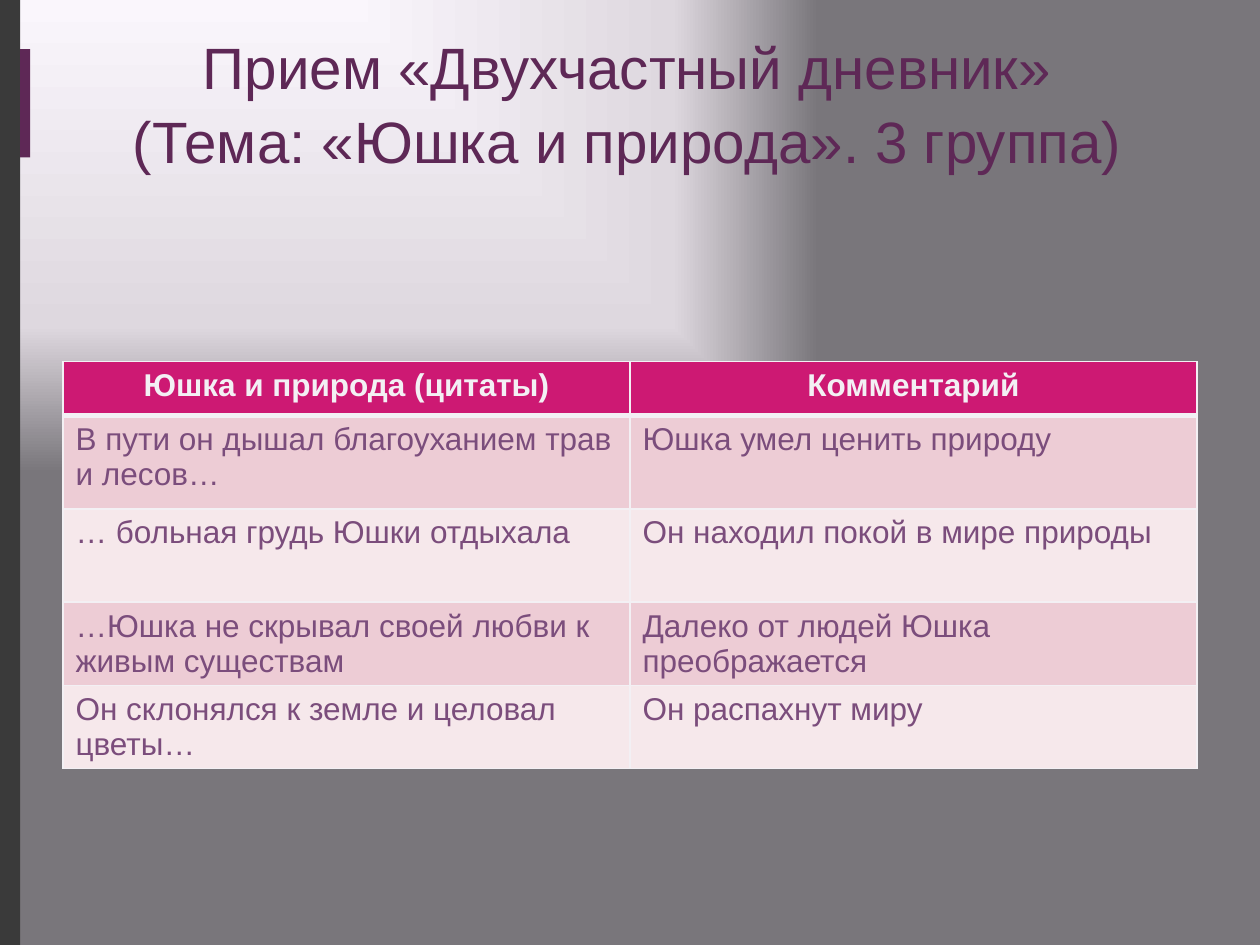
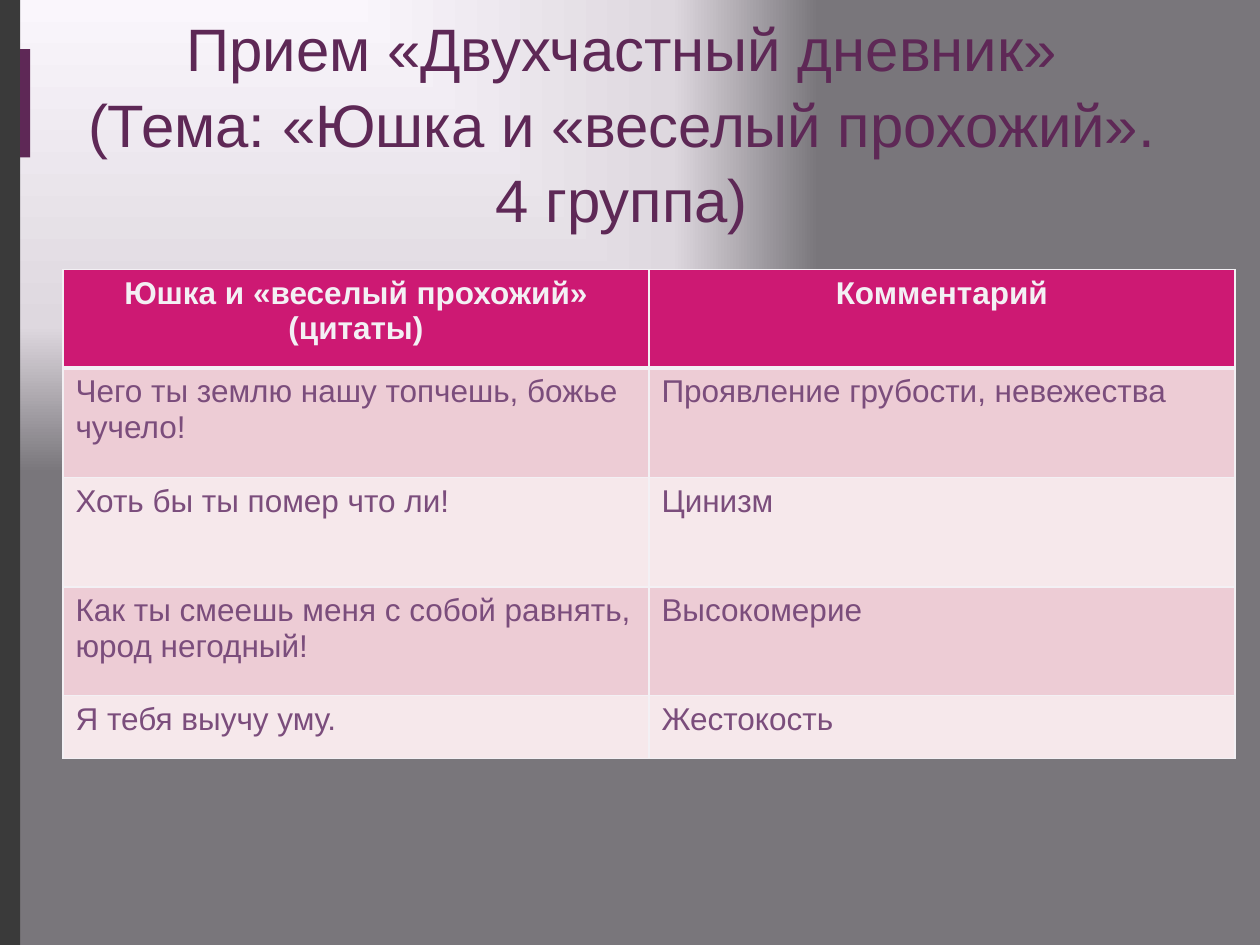
from lxml import etree
from pptx import Presentation
from pptx.dml.color import RGBColor
from pptx.enum.shapes import MSO_SHAPE
from pptx.enum.text import MSO_ANCHOR, MSO_AUTO_SIZE, PP_ALIGN
from pptx.oxml.ns import qn
from pptx.util import Inches, Pt

RECTANGLE = MSO_SHAPE.RECTANGLE
MIDDLE = MSO_ANCHOR.MIDDLE
NO_AUTOFIT = MSO_AUTO_SIZE.NONE
CENTER, LEFT = PP_ALIGN.CENTER, PP_ALIGN.LEFT

DIARIES = [
    {
        "title": "Прием «Двухчастный дневник» \v(Тема: «Юшка и природа». 3 группа) ",
        "title_box": (0.37, 0.3, 9.35, 1.01),
        "title_size": 33.3,
        "top": 2.87,
        "width": 9,
        "row_heights": (0.43, 0.74, 0.74, 0.66, 0.66),
        "entries": [
            ("Юшка и природа (цитаты)", "Комментарий"),
            ("В пути он дышал благоуханием трав и лесов…", "Юшка умел ценить природу"),
            ("… больная грудь Юшки отдыхала", "Он находил покой в мире природы"),
            ("…Юшка не скрывал своей любви к живым существам",
             "Далеко от людей Юшка преображается"),
            ("Он склонялся к земле и целовал цветы…", "Он распахнут миру"),
        ],
    },
    {
        "title": "Прием «Двухчастный дневник» \v(Тема: «Юшка и «веселый прохожий». \n4 группа) ",
        "title_box": (0.35, 0.14, 9.3, 1.65),
        "title_size": 34.2,
        "top": 2.14,
        "width": 9.3,
        "row_heights": (0.78, 0.87, 0.87, 0.86, 0.5),
        "entries": [
            ("Юшка и «веселый прохожий» (цитаты)", "Комментарий"),
            ("Чего ты землю нашу топчешь, божье чучело!", "Проявление грубости, невежества"),
            ("Хоть бы ты помер что ли!", "Цинизм"),
            ("Как ты смеешь меня с собой равнять, юрод негодный!", "Высокомерие"),
            ("Я тебя выучу уму.", "Жестокость"),
        ],
    },
]

WIDTH, HEIGHT = 10, 7.5
TABLE_LEFT = 0.5
FONT = "Arial"
PLUM = RGBColor(0x5E, 0x28, 0x56)
CHARCOAL = RGBColor(0x3A, 0x3A, 0x3A)
MAGENTA = RGBColor(0xCD, 0x19, 0x73)
PALE = RGBColor(0xF3, 0xF0, 0xF4)
VIOLET = RGBColor(0x7B, 0x4D, 0x7C)
ROW_TINTS = (RGBColor(0xF6, 0xE8, 0xEB), RGBColor(0xED, 0xCC, 0xD5))

BANDS = [((0, 0, 0.16, HEIGHT), CHARCOAL), ((0.16, 0.39, 0.08, 0.86), PLUM)]
GLOW_STOPS = [(0, "FAF6FC"), (69, "DED8DF"), (100, "79767B")]
GLOW_FOCUS = {"l": 0, "t": -50, "r": 70, "b": 180}


def child(parent, tag, **attributes):
    return etree.SubElement(parent, qn(tag), {k: str(v) for k, v in attributes.items()})


def paint_background(master):
    master.background.fill.gradient()
    glow = master.element.find(".//" + qn("a:gradFill"))
    for part in list(glow):
        glow.remove(part)
    stops = child(glow, "a:gsLst")
    for share, color in GLOW_STOPS:
        child(child(stops, "a:gs", pos=share * 1000), "a:srgbClr", val=color)
    focus = {side: share * 1000 for side, share in GLOW_FOCUS.items()}
    child(child(glow, "a:path", path="rect"), "a:fillToRect", **focus)


def add_bands(slide):
    for box, color in BANDS:
        band = slide.shapes.add_shape(RECTANGLE, *map(Inches, box))
        band.shadow.inherit = False
        band.fill.solid()
        band.fill.fore_color.rgb = color
        band.line.fill.background()


def format_text(paragraph, align, color, **font_values):
    paragraph.alignment = align
    for run in paragraph.runs:
        run.font.color.rgb = color
        for key, value in {"name": FONT, **font_values}.items():
            setattr(run.font, key, value)


def write_title(title, diary):
    title.left, title.top, title.width, title.height = map(Inches, diary["title_box"])
    frame = title.text_frame
    frame.text = diary["title"]
    for key, value in {"auto_size": NO_AUTOFIT, "vertical_anchor": MIDDLE, "word_wrap": True}.items():
        setattr(frame, key, value)
    for paragraph in frame.paragraphs:
        paragraph.line_spacing = 1.05
        format_text(paragraph, CENTER, PLUM, size=Pt(diary["title_size"]))


def add_borders(cell, row):
    weights = {"L": 1, "R": 1, "T": 3 if row == 1 else 1, "B": 3 if row == 0 else 1}
    properties = cell._tc.get_or_add_tcPr()
    for side, weight in weights.items():
        border = child(properties, "a:ln" + side, w=Pt(weight))
        child(child(border, "a:solidFill"), "a:srgbClr", val=PALE)


def add_diary_table(slide, diary):
    entries, heights = diary["entries"], diary["row_heights"]
    columns = len(entries[0])
    box = (TABLE_LEFT, diary["top"], diary["width"], sum(heights))
    table = slide.shapes.add_table(len(entries), columns, *map(Inches, box)).table
    for column in table.columns:
        column.width = Inches(diary["width"] / columns)
    for row, (entry, height) in enumerate(zip(entries, heights)):
        table.rows[row].height = Inches(height)
        header = row == 0
        for column, words in enumerate(entry):
            cell = table.cell(row, column)
            cell.text = words
            add_borders(cell, row)
            cell.fill.solid()
            cell.fill.fore_color.rgb = MAGENTA if header else ROW_TINTS[row % 2]
            format_text(cell.text_frame.paragraphs[0], CENTER if header else LEFT,
                        PALE if header else VIOLET, size=Pt(18), bold=header)


def main():
    deck = Presentation()
    deck.slide_width, deck.slide_height = Inches(WIDTH), Inches(HEIGHT)
    paint_background(deck.slide_master)
    title_only = deck.slide_layouts.get_by_name("Title Only")
    for diary in DIARIES:
        slide = deck.slides.add_slide(title_only)
        add_bands(slide)
        write_title(slide.shapes.title, diary)
        add_diary_table(slide, diary)
    deck.save("out.pptx")


if __name__ == "__main__":
    main()
